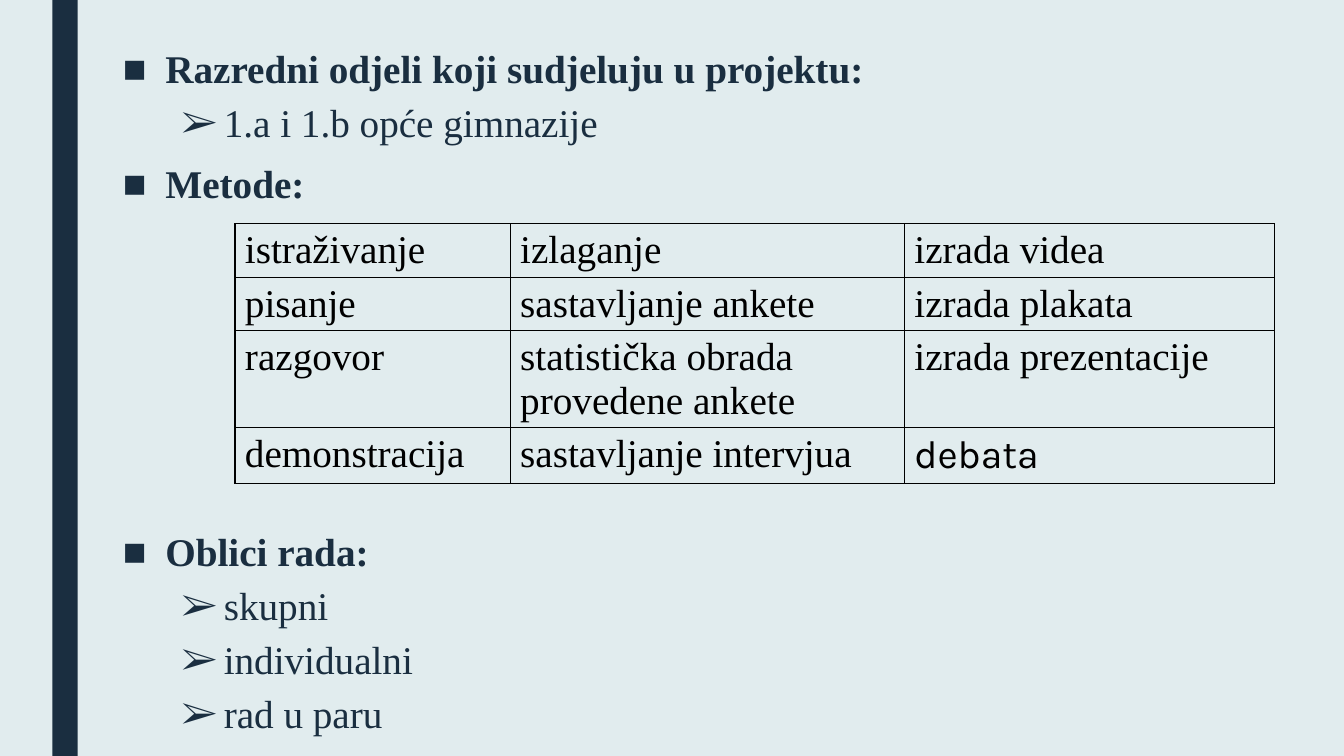
from dataclasses import dataclass

import lxml.etree
import pptx
import pptx.dml.color
import pptx.enum.shapes
import pptx.enum.text
import pptx.oxml.ns
import pptx.util


@dataclass(frozen=True)
class Theme:
    background: str = "E1ECEE"
    navy: str = "1A2E40"
    black: str = "000000"
    serif: str = "Times New Roman"
    sans: str = "Karla"
    text_size: float = 28
    border_width: float = 0.96


@dataclass(frozen=True)
class Area:
    """Left and width in % of slide width, top and height in % of slide height."""
    left: float
    top: float
    width: float
    height: float


@dataclass(frozen=True)
class Level:
    bullet: str
    margin: float
    space_before: float
    bold: bool


@dataclass(frozen=True)
class Point:
    text: str
    level: int = 0
    extra_space: float = 0


THEME = Theme()
SLIDE_WIDTH = pptx.util.Inches(13.33)
SLIDE_HEIGHT = pptx.util.Inches(7.5)
HANGING = 0.42

SIDE_BAR = Area(3.9, 0, 1.88, 100)
OUTLINE = Area(9.15, 5.73, 86.27, 88.4)
METHODS = Area(17.48, 29.6, 77.4, 36.4)
METHOD_COLUMNS = (20.48, 29.33, 27.53)
METHOD_ROW = 5.47

LEVELS = (Level("■", 0.42, 10, True), Level("➢", 1, 5, False))
POINTS = (
    Point("Razredni odjeli koji sudjeluju u projektu:"),
    Point("1.a i 1.b opće gimnazije", 1),
    Point("Metode:"),
    Point("Oblici rada:", extra_space=219),  # leaves room for the table
    Point("skupni", 1),
    Point("individualni", 1),
    Point("rad u paru", 1),
)
METHOD_ROWS = (
    ("istraživanje", "izlaganje", "izrada videa"),
    ("pisanje", "sastavljanje ankete", "izrada plakata"),
    ("razgovor", "statistička obrada provedene ankete", "izrada prezentacije"),
    ("demonstracija", "sastavljanje intervjua", "debata"),
)


def across(percent: float) -> int:
    return round(SLIDE_WIDTH * percent / 100)


def down(percent: float) -> int:
    return round(SLIDE_HEIGHT * percent / 100)


def place(area: Area) -> tuple[int, int, int, int]:
    return across(area.left), down(area.top), across(area.width), down(area.height)


def colour(value: str) -> pptx.dml.color.RGBColor:
    return pptx.dml.color.RGBColor.from_string(value)


def add_child(parent, tag: str, **attributes: str):
    child = lxml.etree.SubElement(parent, pptx.oxml.ns.qn(tag))
    for key, value in attributes.items():
        child.set(key, value)
    return child


def style(paragraph, ink: str, bold: bool = False, face: str = THEME.serif) -> None:
    for run in paragraph.runs:
        run.font.name = face
        run.font.size = pptx.util.Pt(THEME.text_size)
        run.font.bold = bold
        run.font.color.rgb = colour(ink)


def draw_side_bar(slide) -> None:
    bar = slide.shapes.add_shape(
        pptx.enum.shapes.MSO_SHAPE.RECTANGLE, *place(SIDE_BAR))
    bar.shadow.inherit = False
    bar.fill.solid()
    bar.fill.fore_color.rgb = colour(THEME.navy)
    bar.line.fill.background()


def write_point(paragraph, point: Point) -> None:
    level = LEVELS[point.level]
    paragraph.text = point.text
    paragraph.level = point.level
    paragraph.alignment = pptx.enum.text.PP_ALIGN.LEFT
    paragraph.line_spacing = 0.94
    paragraph.space_before = pptx.util.Pt(level.space_before + point.extra_space)
    paragraph.space_after = pptx.util.Pt(2)
    style(paragraph, THEME.navy, level.bold)
    # Bullet and hanging indent
    properties = paragraph._p.get_or_add_pPr()
    properties.set("marL", str(pptx.util.Inches(level.margin)))
    properties.set("indent", str(-pptx.util.Inches(HANGING)))
    add_child(add_child(properties, "a:buClr"), "a:srgbClr", val=THEME.navy)
    add_child(properties, "a:buFont", typeface=THEME.serif)
    add_child(properties, "a:buChar", char=level.bullet)


def write_outline(body) -> None:
    body.left, body.top, body.width, body.height = place(OUTLINE)
    frame = body.text_frame
    frame.word_wrap = True
    frame.auto_size = pptx.enum.text.MSO_AUTO_SIZE.NONE
    frame.vertical_anchor = pptx.enum.text.MSO_ANCHOR.TOP
    frame.margin_left = frame.margin_right = 0
    frame.margin_top = frame.margin_bottom = pptx.util.Inches(0.05)
    for index, point in enumerate(POINTS):
        write_point(frame.add_paragraph() if index else frame.paragraphs[0], point)


def write_cell(cell, text: str) -> None:
    cell.text = text
    style(cell.text_frame.paragraphs[0], THEME.black,
          face=THEME.sans if text == "debata" else THEME.serif)
    properties = cell._tc.get_or_add_tcPr()
    for side in ("a:lnL", "a:lnR", "a:lnT", "a:lnB"):
        border = add_child(properties, side, w=str(pptx.util.Pt(THEME.border_width)))
        add_child(add_child(border, "a:solidFill"), "a:srgbClr", val=THEME.black)
    cell.fill.solid()
    cell.fill.fore_color.rgb = colour(THEME.background)


def draw_methods(slide) -> None:
    frame = slide.shapes.add_table(
        len(METHOD_ROWS), len(METHOD_COLUMNS), *place(METHODS))
    methods = frame.table
    methods.first_row = methods.horz_banding = False
    for column, width in zip(methods.columns, METHOD_COLUMNS):
        column.width = across(width)
    for row, texts in zip(methods.rows, METHOD_ROWS):
        row.height = down(METHOD_ROW)
        for cell, text in zip(row.cells, texts):
            write_cell(cell, text)
    frame.height = down(METHODS.height)


def main() -> None:
    deck = pptx.Presentation()
    deck.slide_width, deck.slide_height = SLIDE_WIDTH, SLIDE_HEIGHT
    slide = deck.slides.add_slide(deck.slide_layouts[1])
    slide.background.fill.solid()
    slide.background.fill.fore_color.rgb = colour(THEME.background)

    # The slide has no title
    heading = slide.shapes.title._element
    heading.getparent().remove(heading)

    draw_side_bar(slide)
    write_outline(slide.placeholders[1])
    draw_methods(slide)
    deck.save("out.pptx")


if __name__ == "__main__":
    main()
